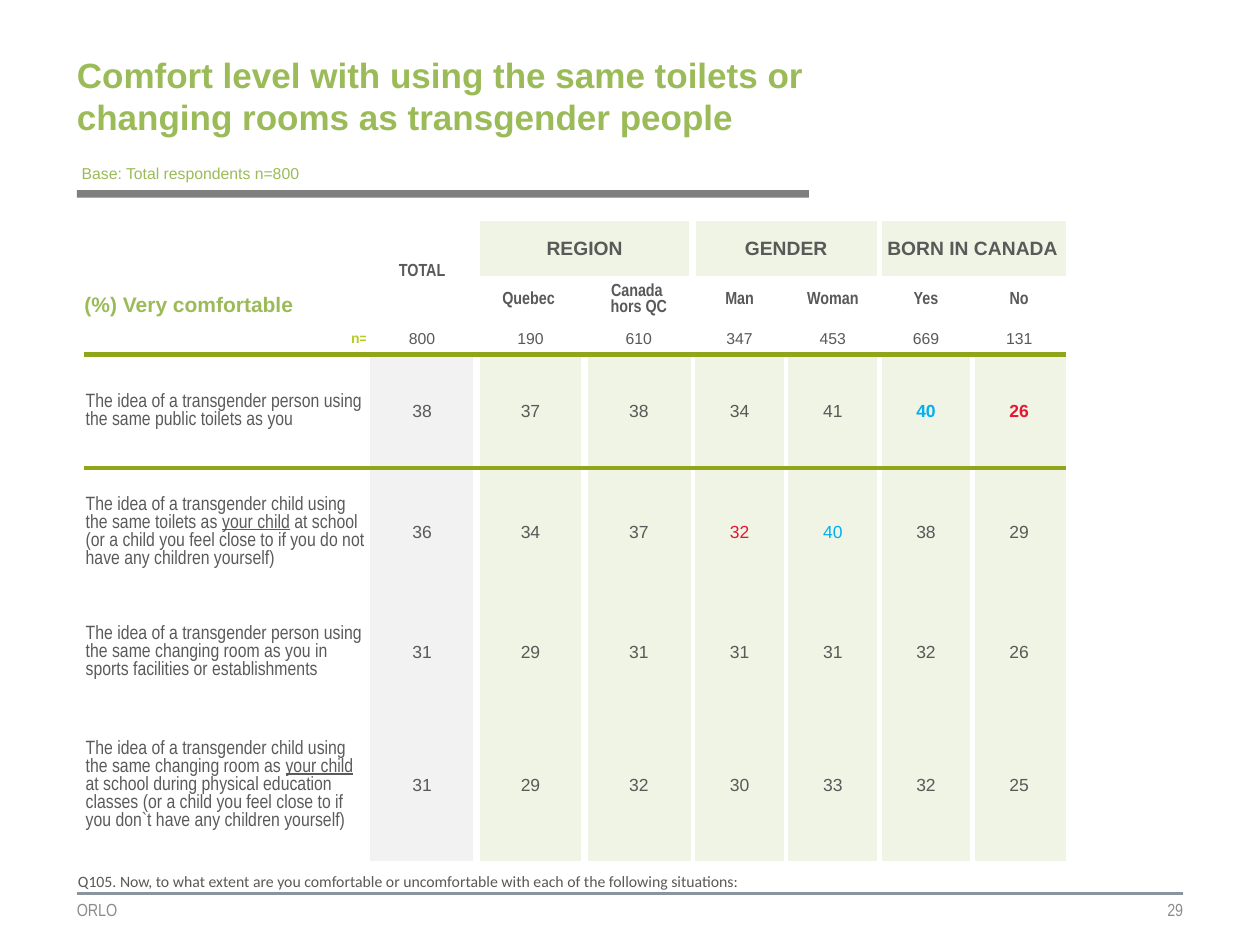
from lxml.etree import SubElement
from pptx import Presentation
from pptx.dml.color import RGBColor
from pptx.enum.shapes import MSO_CONNECTOR, MSO_SHAPE
from pptx.enum.text import MSO_ANCHOR as ANCHOR, MSO_AUTO_SIZE as AUTO, PP_ALIGN as ALIGN
from pptx.oxml import parse_xml
from pptx.oxml.ns import nsdecls, qn
from pptx.util import Inches, Pt

GREEN, GREY, RED, BLUE = "9BBB59", "595959", "E31836", "00B0F0"
RULE, PALE, LIGHT, WHITE = "91A51B", "EFF4E4", "F2F2F2", "FFFFFF"
NARROW = "Arial Narrow"
NO_GRID = "{2D5ABB26-0587-4C30-8999-92F81FD0307C}"

TITLE = "Comfort level with using the same toilets or changing rooms as transgender people"
BASE = "Base: Total respondents n=800"
QUESTION = ("Q105. Now, to what extent are you comfortable or uncomfortable "
            "with each of the following situations:")
GROUPS = ["REGION", "GENDER", "BORN IN CANADA"]
SUBHEADS = ["Quebec ", "Canada \nhors QC", "Man", "Woman", "Yes", "No"]
COUNTS = [800, 190, 610, 347, 453, 669, 131]
ROWS = [
    (["The idea of a transgender person using the same public toilets as you"],
     [38, 37, 38, 34, 41, 40, 26]),
    (["The idea of a transgender child using the same toilets as ", "your child",
      " at school (or a child you feel close to if you do not have any children yourself)"],
     [36, 34, 37, 32, 40, 38, 29]),
    (["The idea of a transgender person using the same changing room as you in sports "
      "facilities or establishments"],
     [31, 29, 31, 31, 31, 32, 26]),
    (["The idea of a transgender child using the same changing room as ", "your child",
      " at school during physical education classes (or a child you feel close to if "
      "you don`t have any children yourself)"],
     [31, 29, 32, 30, 33, 32, 25]),
]
MARKS = {(0, 6): (BLUE, True), (0, 7): (RED, True), (1, 4): (RED, False), (1, 5): (BLUE, False)}
COL_WIDTHS = [2.25, 0.86, 0.86, 0.86, 0.74, 0.74, 0.74, 0.74]
ROW_HEIGHTS = [0.25, 0.17, 0.37, 0.25, 0.9, 1.01, 0.9, 1.21]
COUNT_ROW, FIRST_ROW = 3, 4


def rgb(value):
    """Turn a hex string into a colour."""
    return RGBColor.from_string(value)


def add_run(p, text, size, color, font="Arial", bold=False, underline=None):
    """Add one formatted run to a paragraph."""
    r = p.add_run()
    r.text = text
    f = r.font
    f.size, f.name, f.bold, f.underline = Pt(size), font, bold, underline
    f.color.rgb = rgb(color)


def set_margins(box, left, top, right, bottom):
    """Set the four inner margins of a text frame or cell."""
    box.margin_left, box.margin_top = Inches(left), Inches(top)
    box.margin_right, box.margin_bottom = Inches(right), Inches(bottom)


def add_label(slide, at, text, size, color, font="Arial", align=ALIGN.LEFT, inset=True):
    """Add a one-line text box."""
    tf = slide.shapes.add_textbox(*map(Inches, at)).text_frame
    tf.word_wrap = True
    if not inset:
        set_margins(tf, 0, 0, 0, 0)
        tf.vertical_anchor = ANCHOR.MIDDLE
    tf.paragraphs[0].alignment = align
    add_run(tf.paragraphs[0], text, size, color, font)
    return tf


def write(cell, text, size, color=GREY, font="Arial", bold=False, align=ALIGN.CENTER):
    """Write a cell text, with a line break at each newline."""
    p = cell.text_frame.paragraphs[0]
    p.alignment = align
    for i, line in enumerate(str(text).split("\n")):
        if i:
            p.add_line_break()
        add_run(p, line, size, color, font, bold)
    return p


def add_borders(cell, row, col):
    """Draw the white gaps between column groups and the rule under the counts."""
    edges = []
    if col in (1, 2, 4, 6):
        edges.append(("lnL", WHITE, 4.5 if col == 2 else 3))
    if col in (0, 1, 3, 5):
        edges.append(("lnR", WHITE, 4.5 if col == 1 else 3))
    if row == FIRST_ROW:
        edges.append(("lnT", RULE, 3))
    if row == COUNT_ROW:
        edges.append(("lnB", RULE, 3))
    tc_pr = cell._tc.get_or_add_tcPr()
    for i, (tag, color, width) in enumerate(edges):
        tc_pr.insert(i, parse_xml(
            f'<a:{tag} {nsdecls("a")} w="{Pt(width)}"><a:solidFill>'
            f'<a:srgbClr val="{color}"/></a:solidFill></a:{tag}>'))


def fill_of(row, col):
    """Give the fill colour of a table cell, or None."""
    if col == 1:
        return LIGHT if row >= FIRST_ROW else None
    return PALE if col > 1 and (row < 2 or row >= FIRST_ROW) else None


def add_table(slide):
    """Build the results table."""
    frame = slide.shapes.add_table(
        len(ROW_HEIGHTS), len(COL_WIDTHS), Inches(0.67), Inches(1.75),
        Inches(sum(COL_WIDTHS)), Inches(sum(ROW_HEIGHTS)))
    table = frame.table
    table.first_row = table.horz_banding = False
    table._tbl.tblPr.find(qn("a:tableStyleId")).text = NO_GRID
    for col, width in zip(table.columns, COL_WIDTHS):
        col.width = Inches(width)
    for row, height in zip(table.rows, ROW_HEIGHTS):
        row.height = Inches(height)

    for r in range(len(ROW_HEIGHTS)):
        for c in range(len(COL_WIDTHS)):
            cell = table.cell(r, c)
            set_margins(cell, 0.01, 0.01, 0.01, 0)
            cell.vertical_anchor = ANCHOR.MIDDLE
            fill = fill_of(r, c)
            if fill:
                cell.fill.solid()
                cell.fill.fore_color.rgb = rgb(fill)
            else:
                cell.fill.background()
            add_borders(cell, r, c)
            SubElement(cell.text_frame.paragraphs[0]._p, qn("a:endParaRPr"), sz="400")

    table.cell(0, 1).merge(table.cell(2, 1))
    write(table.cell(0, 1), "TOTAL", 10, font=NARROW, bold=True)
    for i, name in enumerate(GROUPS):
        c = 2 + 2 * i
        table.cell(0, c).merge(table.cell(1, c + 1))
        write(table.cell(0, c), name, 11, bold=True)
    for c, name in enumerate(SUBHEADS, 2):
        write(table.cell(2, c), name, 10, font=NARROW, bold=True)

    table.cell(1, 0).merge(table.cell(2, 0))
    for r, text, size, color, align in (
            (1, "(%) Very comfortable", 12, GREEN, ALIGN.LEFT),
            (COUNT_ROW, "n=", 8, "B5CC22", ALIGN.RIGHT)):
        cell = table.cell(r, 0)
        set_margins(cell, 0, 0.05, 0, 0.05)
        write(cell, text, size, color, bold=True, align=align).line_spacing = 0.95
    table.cell(1, 0).vertical_anchor = ANCHOR.BOTTOM

    for c, count in enumerate(COUNTS, 1):
        write(table.cell(COUNT_ROW, c), count, 9)
    for i, (parts, values) in enumerate(ROWS):
        p = table.cell(FIRST_ROW + i, 0).text_frame.paragraphs[0]
        for part in parts:
            add_run(p, part, 11, "5A5A5A", NARROW, underline=part == "your child")
        for c, value in enumerate(values, 1):
            color, bold = MARKS.get((i, c), (GREY, False))
            write(table.cell(FIRST_ROW + i, c), value, 10, color, bold=bold)


def main():
    """Build the slide and save it."""
    prs = Presentation()
    prs.slide_width, prs.slide_height = Inches(10), Inches(7.5)
    slide = prs.slides.add_slide(prs.slide_layouts[5])

    line = slide.shapes.add_connector(
        MSO_CONNECTOR.STRAIGHT, Inches(0.61), Inches(7.09), Inches(9.39), Inches(7.09))
    line.line.color.rgb, line.line.width = rgb("88959E"), Pt(1.5)
    SubElement(line._element.spPr, qn("a:effectLst"))
    bar = slide.shapes.add_shape(
        MSO_SHAPE.RECTANGLE, Inches(0.61), Inches(1.51), Inches(5.81), Inches(0.06))
    bar.shadow.inherit = False
    bar.fill.solid()
    bar.fill.fore_color.rgb = rgb("7F7F7F")
    bar.line.fill.background()

    title = slide.shapes.title
    title.left, title.top = Inches(0.61), Inches(0.41)
    title.width, title.height = Inches(5.81), Inches(0.69)
    tf = title.text_frame
    tf.auto_size, tf.word_wrap, tf.vertical_anchor = AUTO.NONE, True, ANCHOR.MIDDLE
    set_margins(tf, 0, 0, 0, 0)
    tf.paragraphs[0].alignment = ALIGN.LEFT
    add_run(tf.paragraphs[0], TITLE, 20, GREEN, bold=True)

    add_label(slide, (0.55, 1.25, 1.95, 0.25), BASE, 9, GREEN).word_wrap = False
    add_table(slide)
    add_label(slide, (0.52, 6.87, 8.81, 0.25), QUESTION, 9, GREY, "Calibri")
    add_label(slide, (0.61, 7.09, 2.8, 0.26), "ORLO", 10, "8C8C8C", NARROW, inset=False)
    add_label(slide, (6.55, 7.09, 2.84, 0.26), "29", 10, "8C8C8C", NARROW, ALIGN.RIGHT, False)
    prs.save("out.pptx")


if __name__ == "__main__":
    main()
